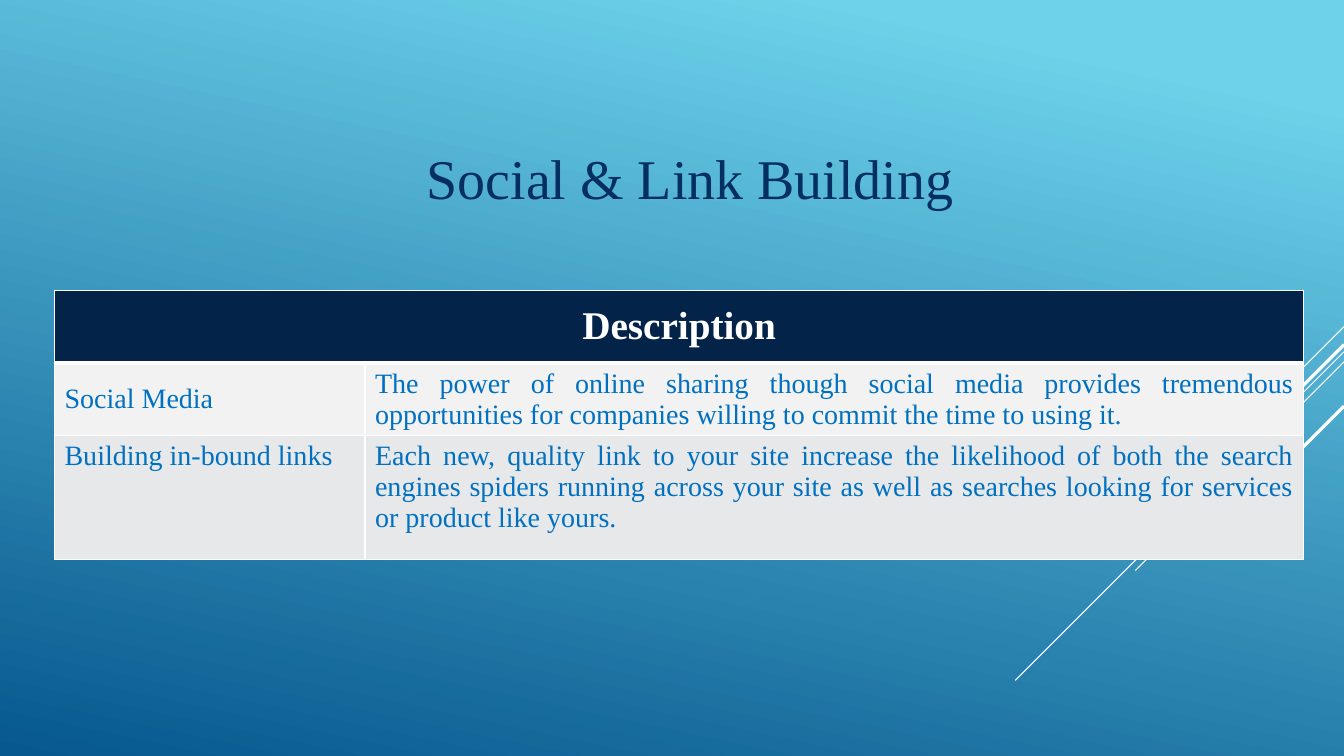
from lxml.etree import SubElement
from pptx import Presentation
from pptx.dml.color import RGBColor
from pptx.enum.shapes import MSO_CONNECTOR
from pptx.enum.text import MSO_ANCHOR, PP_ALIGN
from pptx.oxml.ns import qn
from pptx.util import Inches, Pt

WIDE, HIGH = 13.33, 7.5
FONT = "Times New Roman"
HEX = {"sky": "6ED2EB", "deep": "06588E", "title": "052F61", "head": "042349",
       "white": "FFFFFF", "text": "0070C0", "odd": "F2F2F2", "even": "E7E8EA"}
# Start height at the right edge, length along each axis, line width
RAYS = [(3.24, 1, 0.75), (3.49, 3.26, 0.75), (3.59, 2.07, 0.75),
        (3.42, 1.91, 2.25), (4.03, 1.39, 2.25)]
COLS = [3.08, 9.31]
ROWS = [0.72, 0.72, 1.23]
TOPICS = [
    ("Social Media",
     "The power of online sharing though social media provides tremendous "
     "opportunities for companies willing to commit the time to using it."),
    ("Building in-bound links",
     "Each new, quality link to your site increase the likelihood of both the "
     "search engines spiders running across your site as well as searches "
     "looking for services or product like yours."),
]


def tint(name):
    return RGBColor.from_string(HEX[name])


def style(para, size, color, align, bold=False):
    para.alignment = align
    for run in para.runs:
        font = run.font
        font.name, font.size, font.bold = FONT, Pt(size), bold
        font.color.rgb = tint(color)


def paint(slide):
    fill = slide.background.fill
    fill.gradient()
    fill.gradient_angle = 258
    for stop, name, place in zip(fill.gradient_stops, ("sky", "deep"), (0.1, 1)):
        stop.color.rgb = tint(name)
        stop.position = place


def rays(slide, right):
    """Draw the diagonal lines that run down and left from the right edge."""
    for top, reach, width in RAYS:
        ray = slide.shapes.add_connector(
            MSO_CONNECTOR.STRAIGHT, Inches(right), Inches(top),
            Inches(right - reach), Inches(top + reach))
        ray.line.color.rgb = tint("white")
        ray.line.width = Pt(width)
        SubElement(ray._element.spPr, qn("a:effectLst"))


def title(slide, left, top, width, height):
    box = slide.shapes.title
    box.left, box.top = Inches(left), Inches(top)
    box.width, box.height = Inches(width), Inches(height)
    frame = box.text_frame
    frame.text = "Social & Link Building"
    frame.vertical_anchor = MSO_ANCHOR.MIDDLE
    style(frame.paragraphs[0], 40, "title", PP_ALIGN.CENTER)


def dress(cell, fill, base=1):
    """Give a cell its fill and white borders, the lower one of width base."""
    props = cell._tc.get_or_add_tcPr()
    for side, width in zip("LRTB", (1, 1, 1, base)):
        edge = SubElement(props, qn(f"a:ln{side}"), w=str(Pt(width)))
        solid = SubElement(edge, qn("a:solidFill"))
        SubElement(solid, qn("a:srgbClr"), val=HEX["white"])
    cell.fill.solid()
    cell.fill.fore_color.rgb = tint(fill)


def topics(slide, left, top):
    table = slide.shapes.add_table(
        len(ROWS), len(COLS), Inches(left), Inches(top),
        Inches(sum(COLS)), Inches(sum(ROWS))).table
    for col, width in zip(table.columns, COLS):
        col.width = Inches(width)
    for row, height in zip(table.rows, ROWS):
        row.height = Inches(height)

    head = table.cell(0, 0)
    head.merge(table.cell(0, 1))
    for col in range(len(COLS)):
        dress(table.cell(0, col), "head", 3)
    head.text_frame.text = "Description"
    head.vertical_anchor = MSO_ANCHOR.MIDDLE
    style(head.text_frame.paragraphs[0], 28, "white", PP_ALIGN.CENTER, True)

    looks = [("odd", MSO_ANCHOR.MIDDLE), ("even", MSO_ANCHOR.TOP)]
    for row, (words, (fill, anchor)) in enumerate(zip(TOPICS, looks), 1):
        for col, text in enumerate(words):
            cell = table.cell(row, col)
            dress(cell, fill)
            cell.text_frame.text = text
            cell.vertical_anchor = anchor
            style(cell.text_frame.paragraphs[0], 20, "text", PP_ALIGN.JUSTIFY)


def main():
    deck = Presentation()
    deck.slide_width, deck.slide_height = Inches(WIDE), Inches(HIGH)
    slide = deck.slides.add_slide(deck.slide_layouts.get_by_name("Title Only"))
    paint(slide)
    rays(slide, WIDE)
    title(slide, 3.62, 1.37, 6.45, 0.77)
    topics(slide, 0.54, 2.88)
    deck.save("out.pptx")


if __name__ == "__main__":
    main()
